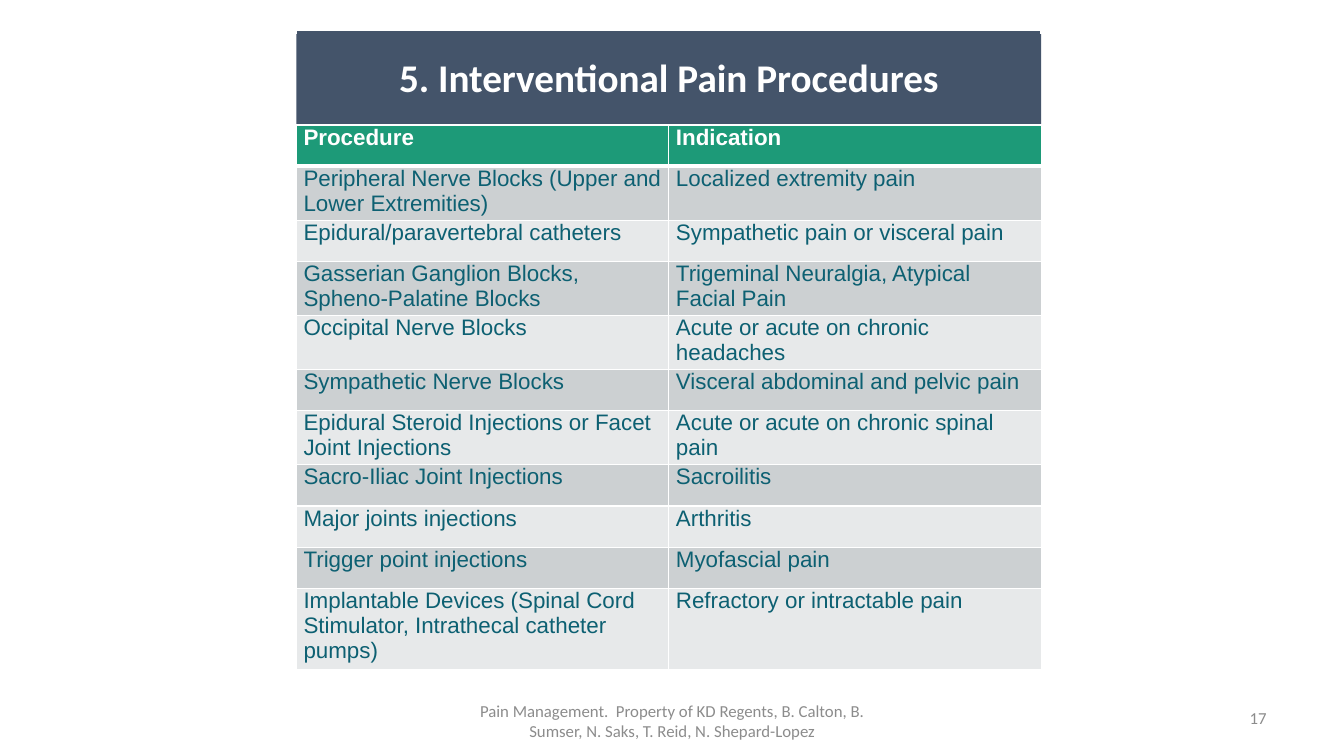
import pptx
import pptx.dml.color
import pptx.enum.shapes
import pptx.enum.text
import pptx.oxml
import pptx.oxml.ns
import pptx.util
from pptx.util import Cm

COLORS = {
    "white": "FFFFFF", "banner": "44546A", "header": "1D9A78",
    "body": "0D6072", "dark_band": "CCD0D2", "light_band": "E7E9EA",
    "footer": "8C8C8C",
}
ROW_HEIGHTS = {1: 1.04, 2: 1.36, 3: 2.04}  # cm by number of text lines
HEADINGS = ("Procedure", "Indication")
PROCEDURES = [
    ("Peripheral Nerve Blocks (Upper and Lower Extremities)", "Localized extremity pain", 2),
    ("Epidural/paravertebral catheters", "Sympathetic pain or visceral pain", 1),
    ("Gasserian Ganglion Blocks, Spheno-Palatine Blocks", "Trigeminal Neuralgia, Atypical Facial Pain", 2),
    ("Occipital Nerve Blocks", "Acute or acute on chronic headaches", 2),
    ("Sympathetic Nerve Blocks", "Visceral abdominal and pelvic pain", 1),
    ("Epidural Steroid Injections or Facet Joint Injections", "Acute or acute on chronic spinal pain", 2),
    ("Sacro-Iliac Joint Injections", "Sacroilitis", 1),
    ("Major joints injections", "Arthritis", 1),
    ("Trigger point injections", "Myofascial pain", 1),
    ("Implantable Devices (Spinal Cord Stimulator, Intrathecal catheter pumps)", "Refractory or intractable pain", 3),
]
CELL_FORMAT = {
    "margin_left": Cm(0.18), "margin_right": Cm(0.18),
    "margin_top": 0, "margin_bottom": 0,
    "vertical_anchor": pptx.enum.text.MSO_ANCHOR.TOP,
}
BANNER_FORMAT = {
    "margin_left": Cm(0.05), "margin_right": Cm(0.05),
    "margin_top": Cm(0.05), "margin_bottom": Cm(0.05),
    "vertical_anchor": pptx.enum.text.MSO_ANCHOR.MIDDLE,
    "word_wrap": True, "auto_size": pptx.enum.text.MSO_AUTO_SIZE.NONE,
}
FOOTER_FORMAT = {
    "vertical_anchor": pptx.enum.text.MSO_ANCHOR.MIDDLE, "word_wrap": True,
}


def apply_format(target, values):
    for name, value in values.items():
        setattr(target, name, value)


def rgb(name):
    return pptx.dml.color.RGBColor.from_string(COLORS[name])


def fill_solid(target, color):
    target.fill.solid()
    target.fill.fore_color.rgb = rgb(color)


def write_text(text_frame, text, font, size, color, bold=False, alignment=None):
    paragraph = text_frame.paragraphs[0]
    paragraph.alignment = alignment
    run = paragraph.add_run()
    run.text = text
    apply_format(run.font, {"name": font, "size": pptx.util.Pt(size), "bold": bold})
    run.font.color.rgb = rgb(color)
    return paragraph


def set_borders(cell, widths):
    """Draw white borders; widths gives points for left, right, top, bottom."""
    properties = cell._tc.get_or_add_tcPr()
    for side, width in zip("LRTB", widths):
        properties.append(pptx.oxml.parse_xml(
            f'<a:ln{side} {pptx.oxml.ns.nsdecls("a")} w="{pptx.util.Pt(width)}">'
            f'<a:solidFill><a:srgbClr val="{COLORS["white"]}"/></a:solidFill></a:ln{side}>'))


def add_banner(slide, left, top, width, height):
    """Fill the box with the title and a backing that shows above it."""
    offset = Cm(0.1)
    backing = slide.shapes.add_shape(
        pptx.enum.shapes.MSO_SHAPE.RECTANGLE, left, top, width, height - offset)
    backing.shadow.inherit = False
    fill_solid(backing, "banner")
    backing.line.color.rgb = rgb("white")
    backing.line.width = pptx.util.Pt(1)

    title = slide.shapes.title
    title.element.addprevious(backing.element)
    apply_format(title, {"left": left, "top": top + offset,
                         "width": width, "height": height - offset})
    fill_solid(title, "banner")
    apply_format(title.text_frame, BANNER_FORMAT)
    paragraph = write_text(title.text_frame, "5. Interventional Pain Procedures", "Calibri",
                           28, "white", True, pptx.enum.text.PP_ALIGN.CENTER)
    paragraph.line_spacing = 0.9


def add_procedure_table(slide, left, top, width):
    rows = [(*HEADINGS, 1), *PROCEDURES]
    heights = [Cm(ROW_HEIGHTS[lines]) for *_, lines in rows]
    table = slide.shapes.add_table(
        len(rows), len(HEADINGS), left, top, width, sum(heights)).table
    for row_index, (*texts, _) in enumerate(rows):
        table.rows[row_index].height = heights[row_index]
        is_header = row_index == 0
        band = "header" if is_header else "dark_band" if row_index % 2 else "light_band"
        borders = (1, 1, 3 if row_index == 1 else 1, 3 if is_header else 1)
        for column_index, text in enumerate(texts):
            cell = table.cell(row_index, column_index)
            apply_format(cell, CELL_FORMAT)
            set_borders(cell, borders)
            fill_solid(cell, band)
            write_text(cell.text_frame, text, "Arial", 16,
                       "white" if is_header else "body", is_header)


def add_footer_text(slide, text, left, top, width, height, alignment):
    text_frame = slide.shapes.add_textbox(left, top, width, height).text_frame
    apply_format(text_frame, FOOTER_FORMAT)
    write_text(text_frame, text, "Calibri", 12, "footer", alignment=alignment)


def main():
    presentation = pptx.Presentation()
    presentation.slide_width = Cm(33.87)
    presentation.slide_height = Cm(19.05)
    slide = presentation.slides.add_slide(presentation.slide_layouts.get_by_name("Title Only"))

    left, width = Cm(7.47), Cm(18.77)
    banner_top, banner_height = Cm(0.76), Cm(2.39)
    add_banner(slide, left, banner_top, width, banner_height)
    add_procedure_table(slide, left, banner_top + banner_height, width)
    add_footer_text(
        slide, "Pain Management.  Property of KD Regents, B. Calton, B. "
        "Sumser, N. Saks, T. Reid, N. Shepard-Lopez",
        Cm(11.23), Cm(17.65), Cm(11.43), Cm(1.02), pptx.enum.text.PP_ALIGN.CENTER)
    add_footer_text(slide, "17", Cm(31.24), Cm(17.58), Cm(2), Cm(1.02),
                    pptx.enum.text.PP_ALIGN.LEFT)
    presentation.save("out.pptx")


if __name__ == "__main__":
    main()
